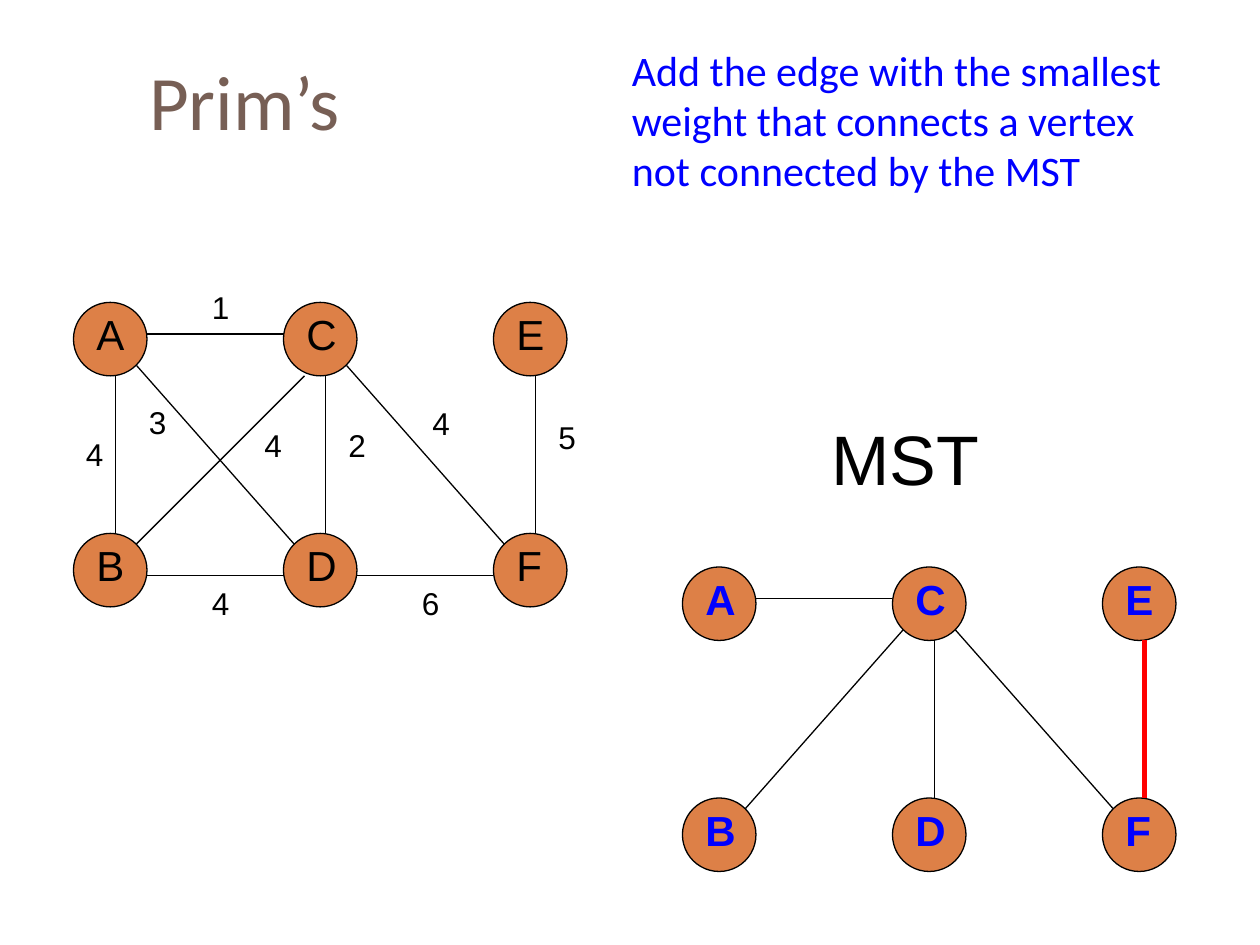
from lxml import etree
from pptx import Presentation
from pptx.dml.color import RGBColor
from pptx.enum.shapes import MSO_CONNECTOR, MSO_SHAPE
from pptx.enum.text import MSO_ANCHOR, PP_ALIGN
from pptx.oxml.ns import qn
from pptx.util import Inches, Pt

STRAIGHT = MSO_CONNECTOR.STRAIGHT
ELLIPSE = MSO_SHAPE.OVAL
LEFT = PP_ALIGN.LEFT
MIDDLE = MSO_ANCHOR.MIDDLE

# The slide is a grid of 120 columns by 90 rows, twelve to the inch.
COLUMNS, ROWS, PER_INCH = 120, 90, 12
NODE_SIZE, COLUMN_STEP, ROW_STEP = 7, 20, 22

COLORS = {
    "title": "775F55",
    "node": "DD8047",
    "ink": "000000",
    "accent": "0000FF",
    "new_edge": "FF0000",
}

TITLE_FONT = {"name": "Calibri", "size": Pt(44), "color": "title"}
RULE_FONT = {"name": "Calibri", "size": Pt(24), "color": "accent"}
HEADING_FONT = {"name": "Arial", "size": Pt(40), "color": "ink"}
WEIGHT_FONT = {"name": "Arial", "size": Pt(18), "color": "ink"}
NODE_FONT = {"name": "Arial", "size": Pt(24), "color": "ink"}
MST_NODE_FONT = {**NODE_FONT, "color": "accent", "bold": True}

# Column and row of each vertex
VERTICES = {
    "A": (0, 0), "B": (0, 1), "D": (1, 1),
    "C": (1, 0), "F": (2, 1), "E": (2, 0),
}

# Where an edge leaves its first node and meets its second
PORTS = {
    "top row": ((7, 3), (0, 3)),
    "bottom row": ((7, 4), (0, 4)),
    "down": ((4, 7), (4, 0)),
    "falling": ((6, 6), (1, 1)),
    "rising": ((6, 1), (1, 6)),
    "rising steep": ((6, 1), (2, 7)),
}

# First vertex, second vertex, direction, weight, weight position
GRAPH_EDGES = [
    ("A", "C", "top row", "1", (12, -2)),
    ("A", "B", "down", "4", (0, 12)),
    ("A", "D", "falling", "3", (6, 9)),
    ("B", "C", "rising steep", "4", (17, 11.2)),
    ("B", "D", "bottom row", "4", (12, 26.2)),
    ("C", "D", "down", "2", (25, 11.2)),
    ("C", "F", "falling", "4", (33, 9.1)),
    ("D", "F", "bottom row", "6", (32, 26.2)),
    ("E", "F", "down", "5", (45, 10.4)),
]
MST_EDGES = [
    ("C", "F", "falling"),
    ("A", "C", "top row"),
    ("C", "D", "down"),
    ("B", "C", "rising"),
]
NEWEST_EDGE = ("E", "F", "down")


def grid(*lengths):
    return [Inches(length / PER_INCH) for length in lengths]


def rgb(color):
    return RGBColor.from_string(COLORS[color])


def write(frame, text, font):
    frame.word_wrap = True
    paragraph = frame.paragraphs[0]
    paragraph.alignment = LEFT
    run = paragraph.add_run()
    run.text = text
    for key, value in font.items():
        if key == "color":
            run.font.color.rgb = rgb(value)
        else:
            setattr(run.font, key, value)


def add_text(shapes, box, text, font):
    write(shapes.add_textbox(*grid(*box)).text_frame, text, font)


def add_title(slide, box, text):
    title = slide.shapes.title
    title.left, title.top, title.width, title.height = grid(*box)
    title.text_frame.vertical_anchor = MIDDLE
    write(title.text_frame, text, TITLE_FONT)


def node_corner(origin, vertex):
    column, row = VERTICES[vertex]
    return origin[0] + column * COLUMN_STEP, origin[1] + row * ROW_STEP


def add_node(slide, corner, label, font):
    left, top = corner
    group = slide.shapes.add_group_shape()
    circle = group.shapes.add_shape(ELLIPSE, *grid(left, top, NODE_SIZE, NODE_SIZE))
    circle.shadow.inherit = False
    circle.fill.solid()
    circle.fill.fore_color.rgb = rgb("node")
    circle.line.color.rgb = rgb("ink")
    circle.line.width = Pt(0.75)
    add_text(group.shapes, (left + 1, top, 6, 6), label, font)


def add_edge(slide, origin, edge, color="ink", width=0.75):
    first, second, direction = edge
    ends = []
    for vertex, port in zip((first, second), PORTS[direction]):
        left, top = node_corner(origin, vertex)
        ends += [left + port[0], top + port[1]]
    line = slide.shapes.add_connector(STRAIGHT, *grid(*ends))
    line.line.color.rgb = rgb(color)
    line.line.width = Pt(width)
    etree.SubElement(line._element.spPr, qn("a:effectLst"))


def add_nodes(slide, origin, font):
    for vertex in VERTICES:
        add_node(slide, node_corner(origin, vertex), vertex, font)


def add_weighted_graph(slide, origin):
    add_nodes(slide, origin, NODE_FONT)
    for *edge, weight, (across, down) in GRAPH_EDGES:
        add_edge(slide, origin, edge)
        box = (origin[0] + across, origin[1] + down, 7, 4.8)
        add_text(slide.shapes, box, weight, WEIGHT_FONT)


def add_spanning_tree(slide, origin):
    left, top = origin
    add_text(slide.shapes, (left + 13, top - 15, 25, 9.2), "MST", HEADING_FONT)
    add_nodes(slide, origin, MST_NODE_FONT)
    for edge in MST_EDGES:
        add_edge(slide, origin, edge)
    add_edge(slide, origin, NEWEST_EDGE, "new_edge", 3)


def main():
    deck = Presentation()
    deck.slide_width, deck.slide_height = grid(COLUMNS, ROWS)
    slide = deck.slides.add_slide(deck.slide_layouts.get_by_name("Title Only"))
    add_title(slide, (13, 3, 107, 13), "Prim’s")
    add_weighted_graph(slide, (7, 28.8))
    add_spanning_tree(slide, (65, 54))
    add_text(
        slide.shapes,
        (59, 3.6, 54, 15.7),
        "Add the edge with the smallest weight that connects a vertex "
        "not connected by the MST",
        RULE_FONT,
    )
    deck.save("out.pptx")


if __name__ == "__main__":
    main()
